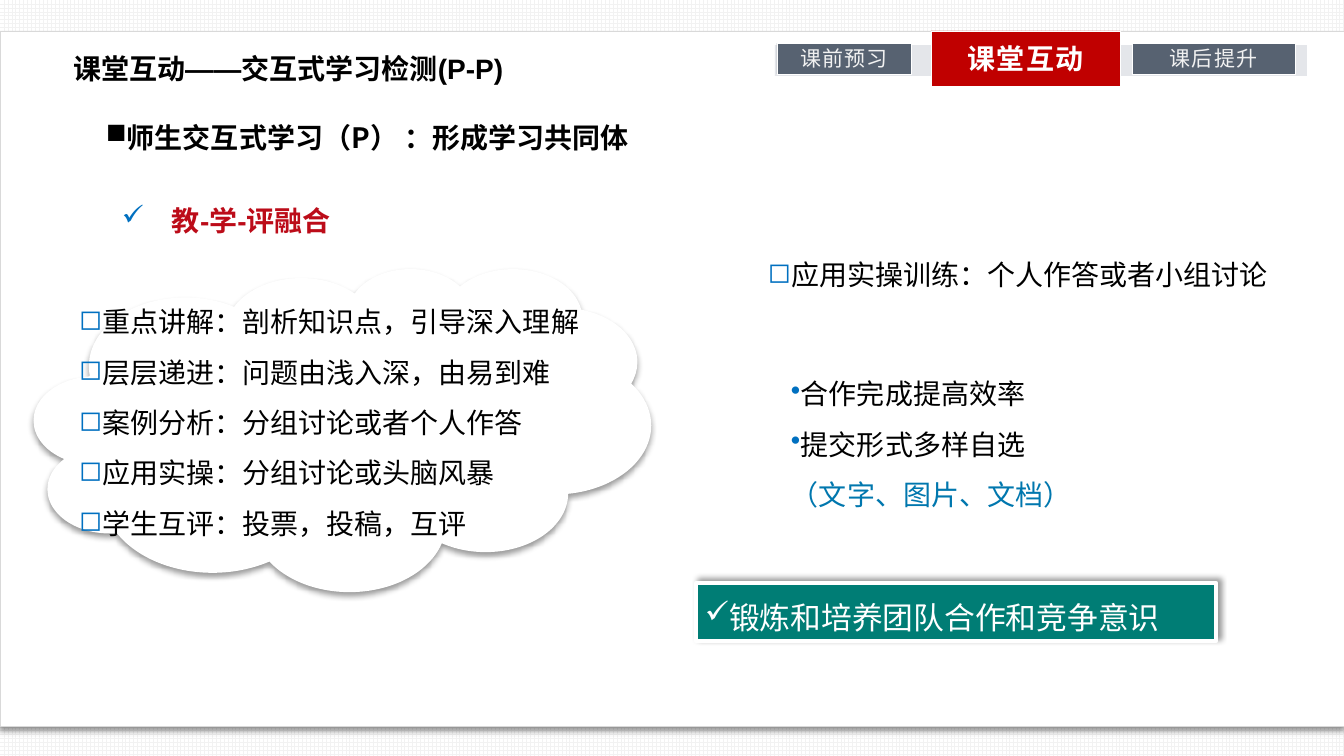
from lxml.etree import SubElement
from pptx import Presentation
from pptx.dml.color import RGBColor
from pptx.enum.dml import MSO_PATTERN
from pptx.enum.shapes import MSO_SHAPE
from pptx.enum.text import MSO_ANCHOR, MSO_AUTO_SIZE, PP_ALIGN
from pptx.oxml.ns import qn
from pptx.util import Emu, Pt

COLORS = {
    "white": "FFFFFF", "black": "000000", "grid": "F2F2F2", "border": "D9D9D9",
    "bar": "E4E6EA", "slate": "576271", "red": "C00000", "crimson": "BC0C19",
    "blue": "0070C0", "note": "0077AE", "teal": "007D75",
}
PIXELS_PER_INCH = 100.8
TITLE_ONLY = 5


def px(length):
    return Emu(round(length * 914400 / PIXELS_PER_INCH))


def rgb(name):
    return RGBColor.from_string(COLORS[name])


def add_bullet(paragraph, char, color, hang):
    properties = paragraph._p.get_or_add_pPr()
    properties.set("marL", str(px(hang)))
    properties.set("indent", str(-px(hang)))
    bullet_color = SubElement(properties, qn("a:buClr"))
    SubElement(bullet_color, qn("a:srgbClr"), val=COLORS[color])
    SubElement(properties, qn("a:buChar"), char=char)


def write_text(frame, paragraphs, size=20, font="Arial", color="black", bold=False,
               align=PP_ALIGN.LEFT, anchor=MSO_ANCHOR.TOP, line_spacing=1.0,
               bullet=None, bullet_color="blue", hang=0, tracking=0, insets=(9, 5)):
    """Each paragraph is a string or a list of (text, run overrides)."""
    frame.word_wrap = True
    frame.auto_size = MSO_AUTO_SIZE.NONE
    frame.vertical_anchor = anchor
    frame.margin_left = frame.margin_right = px(insets[0])
    frame.margin_top = frame.margin_bottom = px(insets[1])
    for index, runs in enumerate(paragraphs):
        paragraph = frame.add_paragraph() if index else frame.paragraphs[0]
        paragraph.alignment = align
        paragraph.line_spacing = line_spacing
        if bullet:
            add_bullet(paragraph, bullet, bullet_color, hang)
        for text, override in [(runs, {})] if isinstance(runs, str) else runs:
            run = paragraph.add_run()
            run.text = text
            run.font.size = Pt(size)
            run.font.bold = bold
            run.font.color.rgb = rgb(override.get("color", color))
            run.font.name = override.get("font", font)
            properties = run._r.get_or_add_rPr()
            SubElement(properties, qn("a:ea"), typeface=run.font.name)
            if tracking:
                properties.set("spc", str(tracking))


class SlideBuilder:
    def __init__(self, slide):
        self.slide = slide

    def shape(self, kind, box, fill, line=None, line_width=0.25, shadow_angle=None):
        shape = self.slide.shapes.add_shape(kind, *map(px, box))
        shape.shadow.inherit = False
        shape.fill.solid()
        shape.fill.fore_color.rgb = rgb(fill)
        if line:
            shape.line.color.rgb = rgb(line)
            shape.line.width = Pt(line_width)
        else:
            shape.line.fill.background()
        if shadow_angle is not None:
            self.cast_shadow(shape, shadow_angle)
        return shape

    def cast_shadow(self, shape, angle):
        effects = shape.element.spPr.find(qn("a:effectLst"))
        shadow = SubElement(effects, qn("a:outerShdw"), blurRad=str(Pt(4)), dist=str(Pt(3)),
                            dir=str(angle * 60000), algn="ctr", rotWithShape="0")
        color = SubElement(shadow, qn("a:srgbClr"), val=COLORS["black"])
        SubElement(color, qn("a:alpha"), val="40000")

    def backdrop(self, box):
        shape = self.shape(MSO_SHAPE.RECTANGLE, box, "white")
        shape.fill.patterned()
        shape.fill.pattern = MSO_PATTERN.LARGE_GRID
        shape.fill.fore_color.rgb = rgb("grid")
        shape.fill.back_color.rgb = rgb("white")

    def title(self, box, text, **text_format):
        """Fill the title placeholder and bring it in front of the panel."""
        title = self.slide.shapes.title
        title.left, title.top, title.width, title.height = map(px, box)
        title.element.getparent().append(title.element)
        write_text(title.text_frame, [text], **text_format)

    def text(self, box, paragraphs, **text_format):
        text_box = self.slide.shapes.add_textbox(*map(px, box))
        write_text(text_box.text_frame, paragraphs, **text_format)

    def tab(self, box, label, fill="slate", color="grid", size=15, bold=False):
        tab = self.shape(MSO_SHAPE.RECTANGLE, box, fill, line="white")
        write_text(tab.text_frame, [label], size=size, color=color, bold=bold, tracking=90,
                   align=PP_ALIGN.CENTER, anchor=MSO_ANCHOR.MIDDLE)


def main():
    presentation = Presentation()
    presentation.slide_width, presentation.slide_height = px(1344), px(756)
    slide = presentation.slides.add_slide(presentation.slide_layouts[TITLE_ONLY])
    builder = SlideBuilder(slide)

    builder.backdrop((0, 0, 1344, 756))
    builder.shape(MSO_SHAPE.RECTANGLE, (0, 31, 1344, 695), "white",
                  line="border", line_width=0.5, shadow_angle=90)
    builder.title((65, 47, 466, 42), "课堂互动——交互式学习检测(P-P)", bold=True, insets=(8, 4))

    builder.shape(MSO_SHAPE.RECTANGLE, (775, 45, 532, 31), "bar")
    builder.tab((777, 43, 134, 31), "课前预习")
    builder.tab((1132, 43, 163, 31), "课后提升")
    builder.tab((931, 31, 189, 55), "课堂互动", fill="red", color="white", size=20, bold=True)

    builder.text((97, 105, 556, 50),
                 [[("师生交互式学习", {}), ("（P） ", {"font": "Noto Sans CJK SC"}),
                   ("：形成学习共同体", {})]],
                 bold=True, line_spacing=1.3, bullet="■", bullet_color="black", hang=0)
    builder.text((113, 188, 268, 54), ["教-学-评融合"], color="crimson", bold=True,
                 line_spacing=1.3, bullet="✓", hang=50)

    list_format = {"font": "Calibri", "line_spacing": 1.5}
    builder.shape(MSO_SHAPE.CLOUD, (34, 268, 617, 323), "white", shadow_angle=90)
    builder.text((70, 283, 572, 265),
                 ["重点讲解：剖析知识点，引导深入理解",
                  "层层递进：问题由浅入深，由易到难",
                  "案例分析：分组讨论或者个人作答",
                  "应用实操：分组讨论或头脑风暴",
                  "学生互评：投票，投稿，互评"], bullet="◻", **list_format)
    builder.text((759, 236, 526, 61), ["应用实操训练：个人作答或者小组讨论"],
                 bullet="◻", **list_format)
    builder.text((782, 355, 299, 163),
                 ["合作完成提高效率",
                  [("提交形式多样自选", {}), ("（文字、图片、文档）", {"color": "note"})]],
                 bullet="•", **list_format)

    banner = builder.shape(MSO_SHAPE.RECTANGLE, (696, 583, 520, 58), "teal",
                           line="white", line_width=3.25, shadow_angle=315)
    write_text(banner.text_frame, ["锻炼和培养团队合作和竞争意识"], size=22, color="white",
               line_spacing=1.3, bullet="✓", bullet_color="white")

    presentation.save("out.pptx")


if __name__ == "__main__":
    main()
